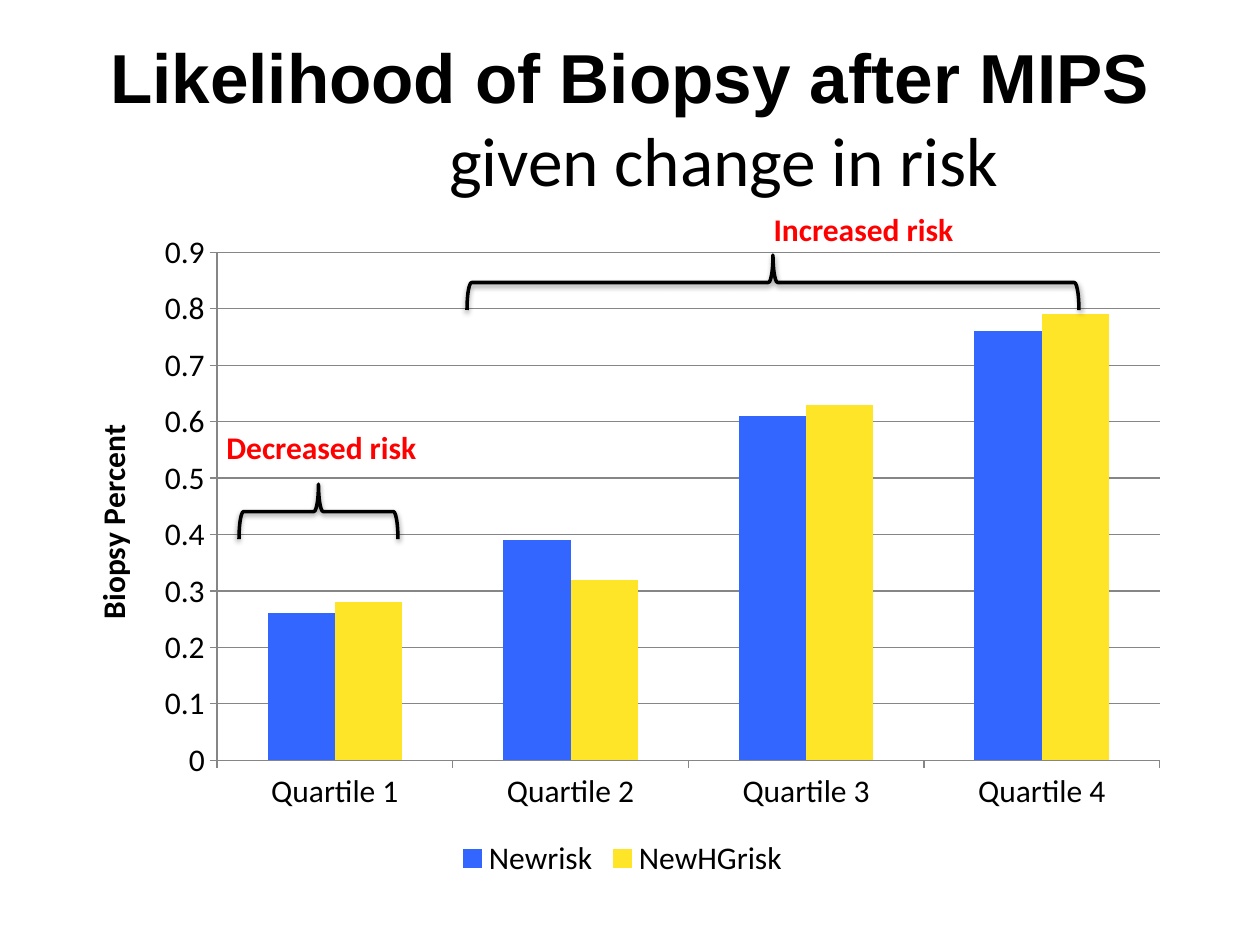
from lxml import etree
from pptx import Presentation
from pptx.chart.data import CategoryChartData
from pptx.dml.color import RGBColor
from pptx.enum.chart import XL_CHART_TYPE, XL_LEGEND_POSITION, XL_TICK_MARK
from pptx.enum.shapes import MSO_SHAPE
from pptx.enum.text import MSO_ANCHOR, MSO_AUTO_SIZE, PP_ALIGN
from pptx.oxml.ns import qn
from pptx.util import Emu, Pt

CLUSTERED = XL_CHART_TYPE.COLUMN_CLUSTERED
LEGEND_BOTTOM = XL_LEGEND_POSITION.BOTTOM
TICK_OUT = XL_TICK_MARK.OUTSIDE
RIGHT_BRACE = MSO_SHAPE.RIGHT_BRACE
TOP, MIDDLE = MSO_ANCHOR.TOP, MSO_ANCHOR.MIDDLE
FIT_SHAPE, FIT_NONE = MSO_AUTO_SIZE.SHAPE_TO_FIT_TEXT, MSO_AUTO_SIZE.NONE
LEFT, CENTER = PP_ALIGN.LEFT, PP_ALIGN.CENTER

COLORS = {"black": "000000", "red": "FF0000", "blue": "3366FF",
          "yellow": "FFE527", "grid": "868686"}
QUARTILES = ["Quartile 1", "Quartile 2", "Quartile 3", "Quartile 4"]
SERIES = [("Newrisk", (0.26, 0.39, 0.61, 0.76), "blue"),
          ("NewHGrisk", (0.28, 0.32, 0.63, 0.79), "yellow")]


def px(n):
    """Convert pixels at 126 to the inch into EMU."""
    return Emu(round(n * 914400 / 126))


def rgb(name):
    """Return the named colour."""
    return RGBColor.from_string(COLORS[name])


def set_font(font, size=18, color="black", bold=False, name="Calibri"):
    """Format a font."""
    font.name, font.size, font.bold = name, Pt(size), bold
    font.color.rgb = rgb(color)


def add_text(tf, text, align=LEFT, indent=0, first=True, **fmt):
    """Write one paragraph into a text frame."""
    p = tf.paragraphs[0] if first else tf.add_paragraph()
    p.alignment = align
    if indent:
        p._p.get_or_add_pPr().set("marL", str(px(indent)))
    r = p.add_run()
    r.text = text
    set_font(r.font, **fmt)


def add_box(s, x, y, w, h, wrap=True, anchor=TOP, fit=FIT_SHAPE):
    """Add a text box and return its text frame."""
    tf = s.shapes.add_textbox(px(x), px(y), px(w), px(h)).text_frame
    tf.word_wrap, tf.vertical_anchor, tf.auto_size = wrap, anchor, fit
    return tf


def add_brace(s, x, y, w, h):
    """Add an upward brace that covers the given area."""
    left, top = x + (w - h) / 2, y + (h - w) / 2
    sp = s.shapes.add_shape(RIGHT_BRACE, px(left), px(top), px(h), px(w))
    sp.rotation = 270
    sp.fill.background()
    sp.line.color.rgb = rgb("black")
    sp.line.width = Pt(2)
    sp.shadow.inherit = False
    effects = sp._element.spPr.find(qn("a:effectLst"))
    shadow = etree.SubElement(effects, qn("a:outerShdw"), blurRad=str(Pt(3.1)),
                              dist=str(Pt(1.6)), dir="5400000", rotWithShape="0")
    color = etree.SubElement(shadow, qn("a:srgbClr"), val=COLORS["black"])
    etree.SubElement(color, qn("a:alpha"), val="38000")


def style_axis(axis):
    """Format the line and ticks of an axis."""
    axis.major_tick_mark = TICK_OUT
    axis.format.line.color.rgb = rgb("grid")
    axis.format.line.width = Pt(0.75)
    set_font(axis.tick_labels.font)


def add_biopsy_chart(s, x, y, w, h):
    """Add the clustered columns of biopsy share by quartile."""
    data = CategoryChartData()
    data.categories = QUARTILES
    for name, values, _ in SERIES:
        data.add_series(name, values)
    chart = s.shapes.add_chart(CLUSTERED, px(x), px(y), px(w), px(h), data).chart
    set_font(chart.font)
    chart.has_title = False
    chart.has_legend = True
    chart.legend.position = LEGEND_BOTTOM
    chart.legend.include_in_layout = False
    set_font(chart.legend.font)
    plot = chart.plots[0]
    plot.gap_width, plot.overlap, plot.vary_by_categories = 150, 0, False
    for series, (_, _, color) in zip(plot.series, SERIES):
        series.format.fill.solid()
        series.format.fill.fore_color.rgb = rgb(color)
    style_axis(chart.category_axis)
    axis = chart.value_axis
    style_axis(axis)
    axis.minimum_scale, axis.maximum_scale, axis.major_unit = 0, 0.9, 0.1
    axis.tick_labels.number_format = "General"
    axis.tick_labels.number_format_is_linked = False
    axis.major_gridlines.format.line.color.rgb = rgb("grid")
    axis.major_gridlines.format.line.width = Pt(0.75)
    add_text(axis.axis_title.text_frame, "Biopsy Percent", align=CENTER, bold=True)


def main():
    """Build the slide and save it."""
    prs = Presentation()
    prs.slide_width, prs.slide_height = px(1260), px(945)
    s = prs.slides.add_slide(prs.slide_layouts[6])
    tf = add_box(s, 63, 38, 1134, 158, anchor=MIDDLE, fit=FIT_NONE)
    add_text(tf, "Likelihood of Biopsy after MIPS", align=CENTER,
             size=39.6, bold=True, name="Arial")
    add_text(tf, "given change in risk", align=CENTER, indent=188,
             first=False, size=39.6)
    add_biopsy_chart(s, 63, 220, 1119, 664)
    add_brace(s, 239, 484, 159, 55)
    add_text(add_box(s, 214, 422, 253, 50, wrap=False), "Decreased risk",
             color="red", bold=True)
    add_text(add_box(s, 558, 204, 611, 50), "Increased risk", align=CENTER,
             color="red", bold=True)
    add_brace(s, 467, 255, 612, 55)
    prs.save("out.pptx")


if __name__ == "__main__":
    main()
